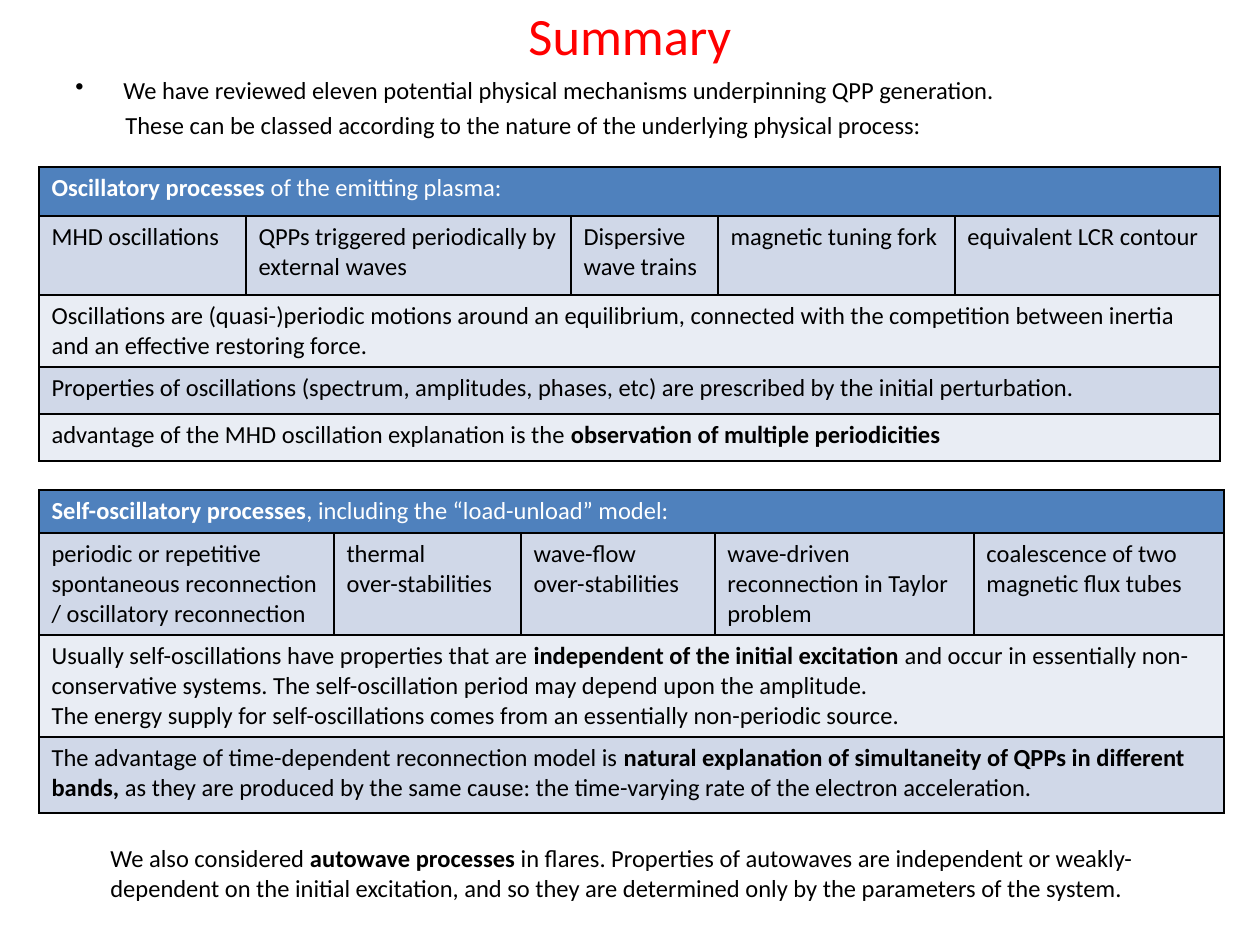
import pptx
import pptx.util
import pptx.dml.color
import pptx.enum.text
import pptx.oxml
import pptx.oxml.ns

PX = 914400 / 126
FONT = "Calibri"
BODY_SIZE = 14
COLOURS = {
    "title": "FF0000",
    "text": "000000",
    "border": "000000",
    "header": "4F81BD",
    "header_text": "FFFFFF",
    "dark_band": "D0D8E8",
    "light_band": "E9EDF4",
}

# Each row is a list of cells, each cell a list of paragraphs; ** marks bold
OSCILLATORY_ROWS = [
    [["**Oscillatory processes **of the emitting plasma:"]],
    [["MHD oscillations"],
     ["QPPs triggered periodically by external waves"],
     ["Dispersive wave trains"],
     ["magnetic tuning fork"],
     ["equivalent LCR contour"]],
    [["Oscillations are (quasi-)periodic motions around an equilibrium, connected "
      "with the competition between inertia and an effective restoring force."]],
    [["Properties of oscillations (spectrum, amplitudes, phases, etc) are prescribed "
      "by the initial perturbation."]],
    [["advantage of the MHD oscillation explanation is the "
      "**observation of multiple periodicities**"]],
]
SELF_OSCILLATORY_ROWS = [
    [["**Self-oscillatory processes**, including the “load-unload” model:"]],
    [["periodic or repetitive spontaneous reconnection / oscillatory reconnection"],
     ["thermal", "over-stabilities"],
     ["wave-flow", "over-stabilities"],
     ["wave-driven reconnection in Taylor problem"],
     ["coalescence of two magnetic flux tubes"]],
    [["Usually self-oscillations have properties that are **independent of the initial "
      "excitation **and occur in essentially non-conservative systems. The "
      "self-oscillation period may depend upon the amplitude.",
      "The energy supply for self-oscillations comes from an essentially "
      "non-periodic source."]],
    [["The advantage of time-dependent reconnection model is **natural explanation of "
      "simultaneity of QPPs in different bands, **as they are produced by the same "
      "cause: the time-varying rate of the electron acceleration."]],
]


def px(length):
    return pptx.util.Emu(round(length * PX))


def rgb(name):
    return pptx.dml.color.RGBColor.from_string(COLOURS[name])


def write(frame, lines, colour="text", size=BODY_SIZE):
    """Write one paragraph per line, with bold between ** marks."""
    frame.word_wrap = True
    frame.text = "\n".join(line.replace("**", "") for line in lines)
    for para, line in zip(frame.paragraphs, lines):
        para.text = ""
        for number, part in enumerate(line.split("**")):
            if part:
                span = para.add_run()
                span.text = part
                span.font.name = FONT
                span.font.size = pptx.util.Pt(size)
                span.font.bold = number % 2 == 1
                span.font.color.rgb = rgb(colour)


def add_text(page, box, lines, **style):
    frame = page.shapes.add_textbox(*map(px, box)).text_frame
    write(frame, lines, **style)
    return frame


def add_title(page, box):
    frame = add_text(page, box, ["Summary"], colour="title", size=30)
    frame.vertical_anchor = pptx.enum.text.MSO_ANCHOR.MIDDLE
    frame.paragraphs[0].alignment = pptx.enum.text.PP_ALIGN.CENTER


def add_introduction(page, box):
    frame = add_text(page, box, [
        "We have reviewed eleven potential physical mechanisms underpinning QPP generation.",
        "These can be classed according to the nature of the underlying physical process:",
    ])
    bulleted, continued = frame.paragraphs
    continued.space_before = pptx.util.Pt(2.8)
    # Bullet with a hanging indent; the second line aligns with its text
    for para, left, indent in ((bulleted, 48, -48), (continued, 50, 0)):
        properties = para._p.get_or_add_pPr()
        properties.set("marL", str(px(left)))
        properties.set("indent", str(px(indent)))
    bullet = pptx.oxml.parse_xml(
        f'<a:buChar {pptx.oxml.ns.nsdecls("a")} char="•"/>')
    bulleted._p.get_or_add_pPr().append(bullet)


def style_cell(cell, fill):
    cell.fill.solid()
    cell.fill.fore_color.rgb = rgb(fill)
    for position, side in enumerate(("lnL", "lnR", "lnT", "lnB")):
        border = pptx.oxml.parse_xml(
            f'<a:{side} {pptx.oxml.ns.nsdecls("a")} w="12700"><a:solidFill>'
            f'<a:srgbClr val="{COLOURS["border"]}"/></a:solidFill></a:{side}>')
        cell._tc.get_or_add_tcPr().insert(position, border)


def add_process_table(page, left, top, widths, heights, rows):
    box = (left, top, sum(widths), sum(heights))
    table = page.shapes.add_table(len(heights), len(widths), *map(px, box)).table
    table.first_row = table.horz_banding = False
    for column, width in zip(table.columns, widths):
        column.width = px(width)
    for index, (height, contents) in enumerate(zip(heights, rows)):
        table.rows[index].height = px(height)
        # Header first, then alternating bands
        fill = "header" if index == 0 else ("light_band", "dark_band")[index % 2]
        cells = [table.cell(index, column) for column in range(len(widths))]
        for cell in cells:
            style_cell(cell, fill)
        if len(contents) == 1:
            cells[0].merge(cells[-1])
        for cell, lines in zip(cells, contents):
            write(cell.text_frame, lines, "header_text" if index == 0 else "text")


def add_conclusion(page, box):
    add_text(page, box, [
        "We also considered **autowave processes** in flares. Properties of autowaves are "
        "independent or weakly-dependent on the initial excitation, and so they are "
        "determined only by the parameters of the system."])


def main():
    deck = pptx.Presentation()
    deck.slide_width, deck.slide_height = px(1260), px(945)
    page = deck.slides.add_slide(deck.slide_layouts[6])
    add_title(page, (63, -20, 1134, 108))
    add_introduction(page, (63, 69, 1134, 80))
    add_process_table(page, 39, 167, (207, 325, 147, 237, 265),
                      (49, 79, 72, 47, 47), OSCILLATORY_ROWS)
    add_process_table(page, 39, 490, (295, 187, 194, 259, 250),
                      (43, 102, 102, 76), SELF_OSCILLATORY_ROWS)
    add_conclusion(page, (98, 837, 1082, 102))
    deck.save("out.pptx")


if __name__ == "__main__":
    main()
